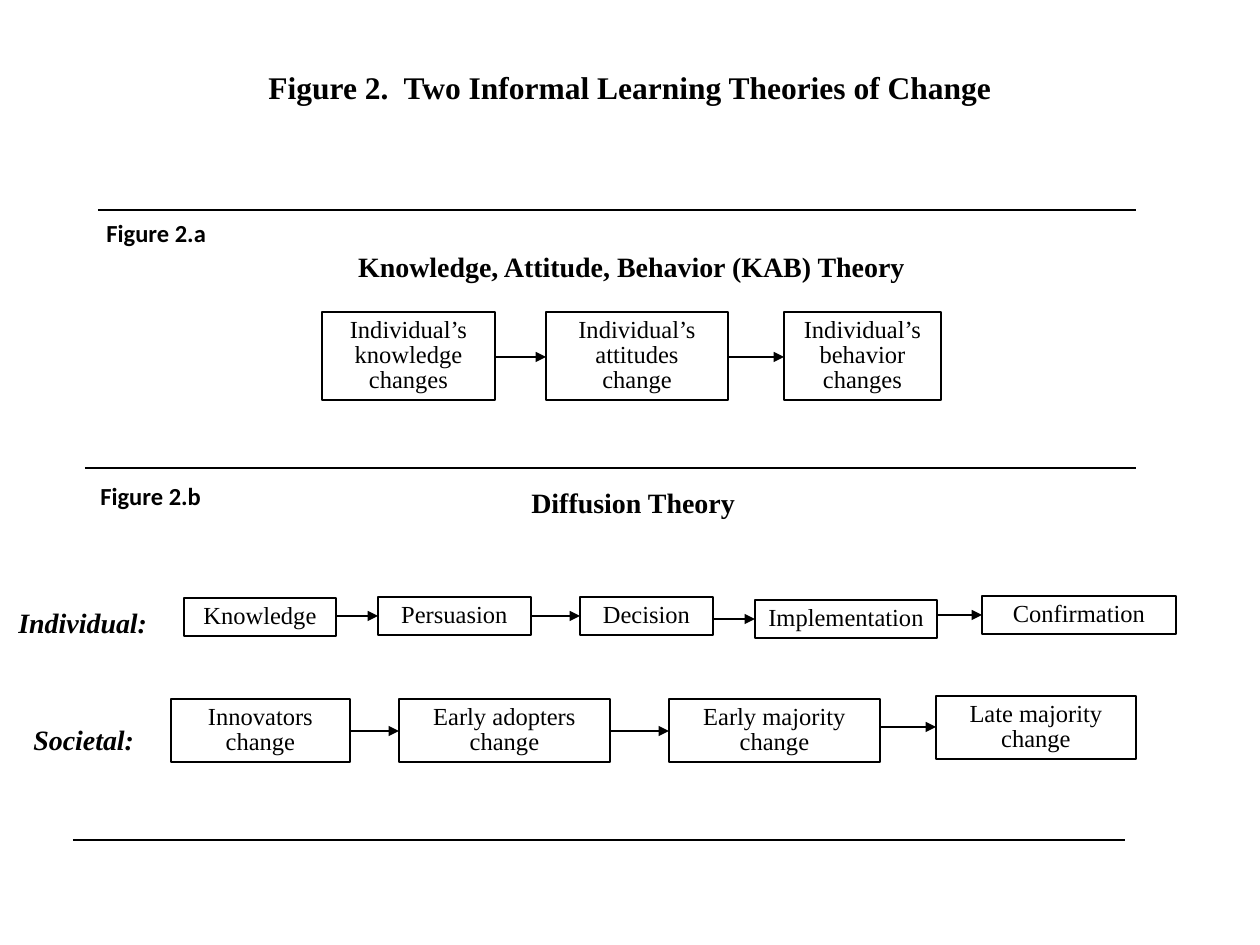
from dataclasses import dataclass

from lxml.etree import SubElement
from pptx import Presentation
from pptx.dml.color import RGBColor
from pptx.enum.shapes import MSO_CONNECTOR, MSO_SHAPE
from pptx.enum.text import MSO_ANCHOR, PP_ALIGN
from pptx.oxml.ns import qn
from pptx.util import Emu, Pt


@dataclass(frozen=True)
class Theme:
    ink: RGBColor = RGBColor(0, 0, 0)
    paper: RGBColor = RGBColor(255, 255, 255)
    serif: str = "Times New Roman"
    sans: str = "Calibri"
    title: int = 18
    heading: int = 16
    body: int = 14
    border: float = 1
    stroke: float = 0.75


THEME = Theme()
PX_PER_INCH = 126

KAB_STEPS = [
    ("Individual’s knowledge changes", 322, 312, 173, 357),
    ("Individual’s attitudes change", 546, 312, 182, 357),
    ("Individual’s behavior changes", 784, 312, 157, None),
]
INDIVIDUAL_STEPS = [
    ("Knowledge", 184, 598, 152, 616),
    ("Persuasion", 378, 597, 153, 616),
    ("Decision", 580, 597, 133, 619),
    ("Implementation", 755, 600, 182, 615),
    ("Confirmation", 982, 596, 194, None),
]
SOCIETAL_STEPS = [
    ("Innovators change", 171, 699, 179, 731),
    ("Early adopters change", 399, 699, 211, 731),
    ("Early majority change", 669, 699, 211, 727),
    ("Late majority change", 936, 696, 200, None),
]


def px(length):
    return Emu(round(length * 914400 / PX_PER_INCH))


def write(shape, text, size=THEME.body, font=THEME.serif, bold=False, italic=False,
          align=PP_ALIGN.LEFT, anchor=MSO_ANCHOR.TOP, spacing=None, after=None):
    frame = shape.text_frame
    frame.word_wrap = True
    frame.vertical_anchor = anchor
    para = frame.paragraphs[0]
    para.alignment = align
    para.line_spacing = spacing
    para.space_after = after
    span = para.add_run()
    span.text = text
    span.font.name = font
    span.font.size = Pt(size)
    span.font.bold = bold
    span.font.italic = italic
    span.font.color.rgb = THEME.ink


def add_label(page, text, left, top, width, height, **style):
    box = page.shapes.add_textbox(px(left), px(top), px(width), px(height))
    write(box, text, bold=True, **style)


def add_step(page, text, left, top, width, height, anchor):
    box = page.shapes.add_shape(
        MSO_SHAPE.RECTANGLE, px(left), px(top), px(width), px(height))
    box.shadow.inherit = False
    box.fill.solid()
    box.fill.fore_color.rgb = THEME.paper
    box.line.color.rgb = THEME.ink
    box.line.width = Pt(THEME.border)
    write(box, text, align=PP_ALIGN.CENTER, anchor=anchor, spacing=0.85, after=Pt(3))


def add_line(page, start, end, y, arrow=False):
    line = page.shapes.add_connector(
        MSO_CONNECTOR.STRAIGHT, px(start), px(y), px(end), px(y))
    line.line.color.rgb = THEME.ink
    line.line.width = Pt(THEME.stroke)
    if arrow:
        SubElement(line.line._get_or_add_ln(), qn("a:tailEnd"), type="triangle")
    SubElement(line._element.spPr, qn("a:effectLst"))


def add_flow(page, steps, height, anchor=MSO_ANCHOR.TOP):
    for text, left, top, width, _ in steps:
        add_step(page, text, left, top, width, height, anchor)
    for (_, left, _, width, y), following in zip(steps, steps[1:]):
        add_line(page, left + width, following[1], y, arrow=True)


def main():
    deck = Presentation()
    deck.slide_width, deck.slide_height = px(1260), px(945)
    page = deck.slides.add_slide(deck.slide_layouts[6])

    add_label(page, "Figure 2.  Two Informal Learning Theories of Change", 63, 53, 1134, 67,
              size=THEME.title, align=PP_ALIGN.CENTER, anchor=MSO_ANCHOR.MIDDLE)
    for start, end, y in [(98, 1136, 210), (85, 1136, 468), (73, 1125, 840)]:
        add_line(page, start, end, y)

    add_label(page, "Figure 2.a", 94, 212, 147, 43, font=THEME.sans)
    add_label(page, "Knowledge, Attitude, Behavior (KAB) Theory", 306, 243, 651, 47,
              size=THEME.heading, align=PP_ALIGN.CENTER)
    add_flow(page, KAB_STEPS, 88)

    add_label(page, "Figure 2.b", 88, 475, 152, 43, font=THEME.sans)
    add_label(page, "Diffusion Theory", 519, 479, 257, 47, size=THEME.heading)
    add_label(page, "Individual:", 6, 599, 165, 47, size=THEME.heading, italic=True)
    add_flow(page, INDIVIDUAL_STEPS, 38, MSO_ANCHOR.MIDDLE)
    add_label(page, "Societal:", 21, 716, 141, 47, size=THEME.heading, italic=True)
    add_flow(page, SOCIETAL_STEPS, 63)

    deck.save("out.pptx")


if __name__ == "__main__":
    main()
